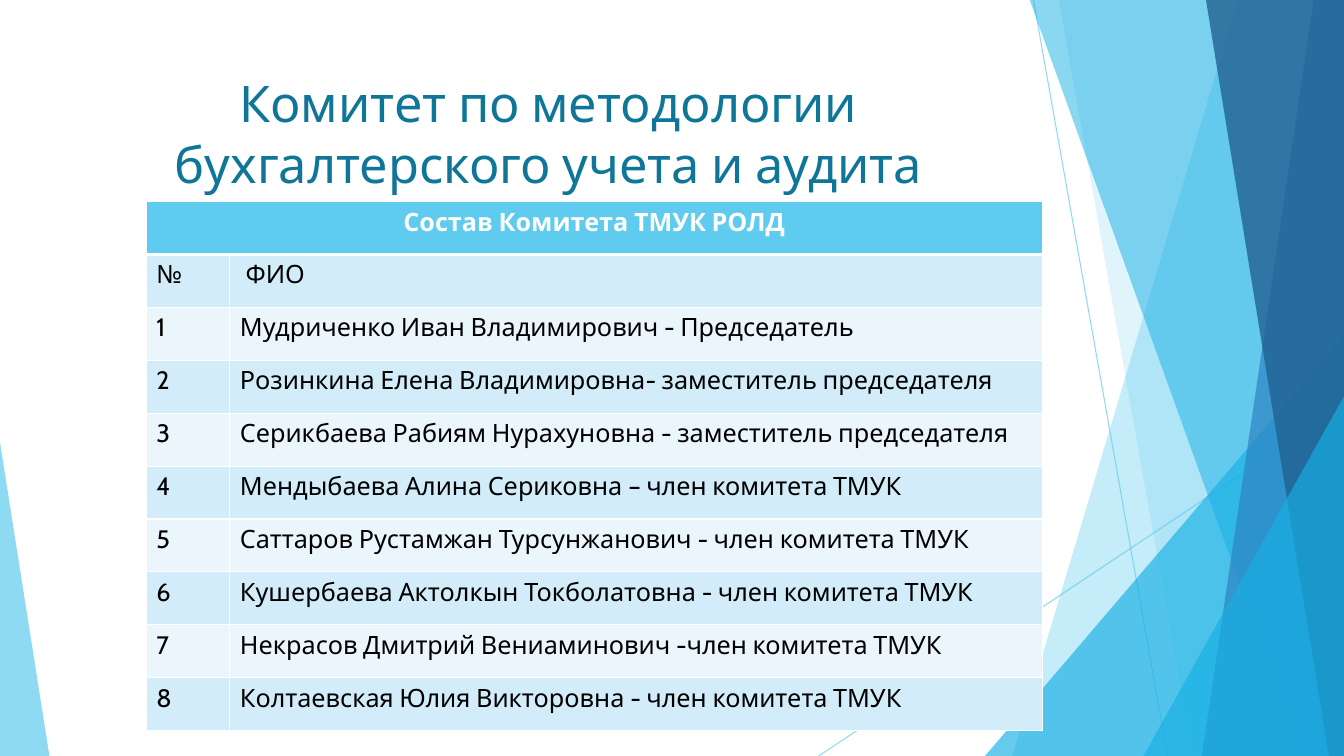
from lxml import etree
from pptx import Presentation, util as u
from pptx.dml import color
from pptx.enum import shapes, text
from pptx.oxml import ns

SKY, CYAN, BLUE, NAVY = "5FCBEF", "17B0E4", "2E83C3", "226292"
TOP, RIGHT, BOTTOM = -0.01, 13.33, 7.5


def paint(target, value, alpha=100):
    target.solid()
    target.fore_color.rgb = color.RGBColor.from_string(value)
    if alpha < 100:
        tint = target._xPr.find(".//" + ns.qn("a:srgbClr"))
        etree.SubElement(tint, ns.qn("a:alpha"), val=str(alpha * 1000))


def write(frame, words, value, align, **formats):
    para = frame.paragraphs[0]
    para.alignment = align
    span = para.add_run()
    span.text = words
    span.font.color.rgb = color.RGBColor.from_string(value)
    for name, setting in {"name": "Cabin", **formats}.items():
        setattr(span.font, name, setting)


deck = Presentation()
deck.slide_width, deck.slide_height = u.Inches(RIGHT), u.Inches(BOTTOM)
page = deck.slides.add_slide(deck.slide_layouts[5])
facets = page.shapes.add_group_shape().shapes

for ends in [(10.25, 0, 11.58, BOTTOM), (RIGHT, 4.03, 8.12, BOTTOM)]:
    line = facets.add_connector(shapes.MSO_CONNECTOR.STRAIGHT, *map(u.Inches, ends))
    line.line.width = u.Pt(0.75)
    paint(line.line.fill, SKY, 70)
    etree.SubElement(line._element.spPr, ns.qn("a:effectLst"))

bands = [
    ("edge", 12.28, 10.04, SKY, 36),
    ("edge", 10.5, 11.83, SKY, 20),
    ("triangle", (9.77, 3.33, 3.56, 4.17), 1, CYAN, 66),
    ("edge", 10.21, 12.91, CYAN, 50),
    ("edge", 13.03, 11.92, BLUE, 70),
    ("edge", 11.96, 13.18, NAVY, 80),
    ("triangle", (11.34, 3.93, 1.99, 3.57), 1, CYAN, 66),
    ("triangle", (0, 4.39, 0.49, 3.11), 0, SKY, 70),
]
for kind, first, second, value, alpha in bands:
    if kind == "edge":
        corners = [(RIGHT, TOP), (RIGHT, BOTTOM), (second, BOTTOM)]
        outline = facets.build_freeform(u.Inches(first), u.Inches(TOP))
        outline.add_line_segments([(u.Inches(x), u.Inches(y)) for x, y in corners])
        band = outline.convert_to_shape()
    else:
        band = facets.add_shape(shapes.MSO_SHAPE.ISOSCELES_TRIANGLE, *map(u.Inches, first))
        band.adjustments[0] = second
    band.shadow.inherit = False
    band.line.fill.background()
    paint(band.fill, value, alpha)

title = page.shapes.title
title.element.getparent().append(title.element)
for name, length in {"left": 0.74, "top": 0.67, "width": 9.4, "height": 1.44}.items():
    setattr(title, name, u.Inches(length))
for name, setting in {
    "word_wrap": True,
    "auto_size": text.MSO_AUTO_SIZE.NONE,
    "vertical_anchor": text.MSO_ANCHOR.TOP,
}.items():
    setattr(title.text_frame, name, setting)
write(title.text_frame, "Комитет по методологии бухгалтерского учета и аудита",
      "0F7698", text.PP_ALIGN.CENTER, size=u.Pt(36))

members = [
    "Мудриченко Иван Владимирович - Председатель",
    "Розинкина Елена Владимировна- заместитель председателя",
    "Серикбаева Рабиям Нурахуновна - заместитель председателя",
    "Мендыбаева Алина Сериковна – член комитета ТМУК",
    "Саттаров Рустамжан Турсунжанович - член комитета ТМУК",
    "Кушербаева Актолкын Токболатовна - член комитета ТМУК",
    "Некрасов Дмитрий Вениаминович -член комитета ТМУК",
    "Колтаевская Юлия Викторовна - член комитета ТМУК",
]
rows = [("Состав Комитета ТМУК РОЛД", ""), ("№", " ФИО")]
rows += [(str(number), member) for number, member in enumerate(members, 1)]

table = page.shapes.add_table(
    len(rows), 2, u.Inches(1.45), u.Inches(2), u.Inches(8.89), u.Inches(5.25)).table
for column, width in zip(table.columns, (0.83, 8.06)):
    column.width = u.Inches(width)
table.cell(0, 0).merge(table.cell(0, 1))

for index, row in enumerate(rows):
    header = index == 0
    shade = SKY if header else ("EAF6FC", "D2ECF9")[index % 2]
    for place, words in enumerate(row):
        cell = table.cell(index, place)
        paint(cell.fill, shade)
        for order, side in enumerate("LRTB"):
            thick = (header and side == "B") or (index == 1 and side == "T")
            border = etree.Element(ns.qn("a:ln" + side), w=str(u.Pt(3 if thick else 1)))
            stroke = etree.SubElement(border, ns.qn("a:solidFill"))
            etree.SubElement(stroke, ns.qn("a:srgbClr"), val="FFFFFF")
            cell._tc.tcPr.insert(order, border)
        if words:
            write(cell.text_frame, words, "FFFFFF" if header else "000000",
                  text.PP_ALIGN.CENTER if header else text.PP_ALIGN.LEFT,
                  size=u.Pt(18), bold=header)

deck.save("out.pptx")
